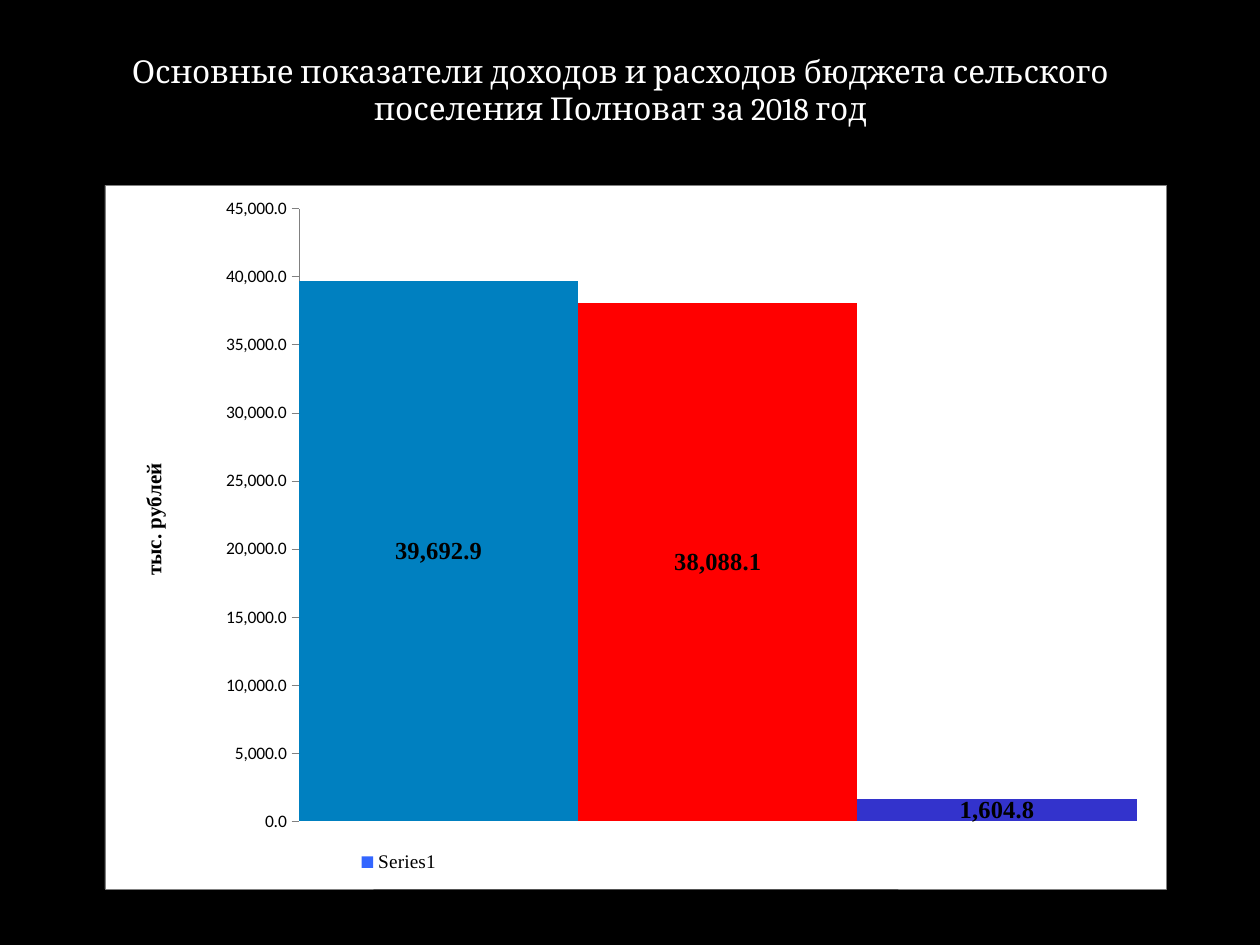
"""Build a slide with a column chart of budget income and spending."""
from lxml import etree
from pptx import Presentation
from pptx import util as u
from pptx.chart.data import CategoryChartData
from pptx.dml.color import RGBColor
from pptx.enum import chart as ch, text
from pptx.oxml import parse_xml
from pptx.oxml.ns import nsdecls, qn

BLACK = RGBColor(0, 0, 0)
WHITE = RGBColor(255, 255, 255)
GREY = RGBColor(0x80, 0x80, 0x80)
AZURE = RGBColor(0x33, 0x66, 0xFF)

TITLE = "Основные показатели доходов и расходов бюджета сельского поселения Полноват за 2018 год"
UNIT = "тыс. рублей"
NAME = "Series1"
BARS = [
    ("1", 39692.9, RGBColor(0, 0x80, 0xC0)),
    ("2", 38088.1, RGBColor(255, 0, 0)),
    ("3", 1604.8, RGBColor(0x33, 0x33, 0xCC)),
]
FORM = "#,##0.0"
SIZE = (10, 7.5)
HEAD = (0.075, 0.048, 0.835, 0.095)
BODY = (0.083, 0.196, 0.843, 0.745)
FONTS = {
    "title": dict(name="Cambria", size=u.Pt(18), bold=False, color=WHITE),
    "chart": dict(name="Arial", size=u.Pt(10), color=BLACK),
    "axis": dict(name="Calibri", size=u.Pt(10), color=BLACK),
    "unit": dict(name="Times New Roman", size=u.Pt(12), bold=True, color=BLACK),
    "key": dict(name="Times New Roman", size=u.Pt(11), color=BLACK),
    "label": dict(name="Times New Roman", size=u.Pt(14), bold=True, color=BLACK),
}


def style(font, kind):
    for key, val in FONTS[kind].items():
        if key == "color":
            font.color.rgb = val
        else:
            setattr(font, key, val)


def place(area):
    return [u.Inches(part * SIZE[i % 2]) for i, part in enumerate(area)]


def lay(node, spot, index, inner=False):
    for old in node.findall(qn("c:layout")):
        node.remove(old)
    box = parse_xml(f"<c:layout {nsdecls('c')}><c:manualLayout/></c:layout>")
    items = [("layoutTarget", "inner")] if inner else []
    items += [("xMode", "edge"), ("yMode", "edge")]
    items += zip("xywh", spot)
    for tag, val in items:
        etree.SubElement(box[0], qn("c:" + tag)).set("val", str(val))
    node.insert(index, box)


def draw(slide):
    data = CategoryChartData(number_format=FORM)
    data.categories = [name for name, _, _ in BARS]
    data.add_series(NAME, [val for _, val, _ in BARS])
    chart = slide.shapes.add_chart(
        ch.XL_CHART_TYPE.COLUMN_STACKED, *place(BODY), data).chart
    style(chart.font, "chart")
    chart.has_title = False
    space = chart.element
    frame = parse_xml(
        f'<c:spPr {nsdecls("c", "a")}>'
        f'<a:solidFill><a:srgbClr val="{WHITE}"/></a:solidFill>'
        f'<a:ln w="{u.Pt(0.25)}"><a:solidFill><a:srgbClr val="{GREY}"/></a:solidFill></a:ln>'
        '</c:spPr>')
    space.find(qn("c:chart")).addnext(frame)
    lay(space.find(".//" + qn("c:plotArea")), (0.183, 0.033, 0.789, 0.871), 0, True)

    plot = chart.plots[0]
    plot.gap_width, plot.overlap, plot.vary_by_categories = 0, 100, False
    row = plot.series[0]
    for fill, tone in [(row.format.fill, AZURE)] + [
            (row.points[i].format.fill, bar[2]) for i, bar in enumerate(BARS)]:
        fill.solid()
        fill.fore_color.rgb = tone
    tags = row.data_labels
    for key, val in dict(show_value=True, number_format=FORM,
                         number_format_is_linked=False,
                         position=ch.XL_LABEL_POSITION.CENTER).items():
        setattr(tags, key, val)
    style(tags.font, "label")

    chart.category_axis.visible = False
    axis = chart.value_axis
    for key, val in dict(has_major_gridlines=False, minimum_scale=0,
                         maximum_scale=45000, major_unit=5000,
                         major_tick_mark=ch.XL_TICK_MARK.OUTSIDE).items():
        setattr(axis, key, val)
    axis.tick_labels.number_format = FORM
    axis.tick_labels.number_format_is_linked = False
    style(axis.tick_labels.font, "axis")
    axis.format.line.color.rgb = GREY
    axis.format.line.width = u.Pt(0.25)
    frame = axis.axis_title.text_frame
    frame.text = UNIT
    style(frame.paragraphs[0].runs[0].font, "unit")
    turn = frame._txBody.bodyPr
    turn.set("rot", "-5400000")
    turn.set("vert", "horz")
    lay(axis.axis_title._element, (0.03, 0.39), 1)

    chart.has_legend = True
    key = chart.legend
    key.position = ch.XL_LEGEND_POSITION.RIGHT
    key.include_in_layout = False
    style(key.font, "key")
    lay(key._element, (0.236, 0.94), 1)


def main():
    deck = Presentation()
    deck.slide_width, deck.slide_height = map(u.Inches, SIZE)
    slide = deck.slides.add_slide(deck.slide_layouts[5])
    back = slide.background.fill
    back.solid()
    back.fore_color.rgb = BLACK
    head = slide.shapes.title
    head.left, head.top, head.width, head.height = place(HEAD)
    frame = head.text_frame
    frame.text = TITLE
    frame.word_wrap = True
    frame.auto_size = text.MSO_AUTO_SIZE.NONE
    frame.vertical_anchor = text.MSO_ANCHOR.TOP
    line = frame.paragraphs[0]
    line.alignment = text.PP_ALIGN.CENTER
    style(line.runs[0].font, "title")
    draw(slide)
    deck.save("out.pptx")


if __name__ == "__main__":
    main()
